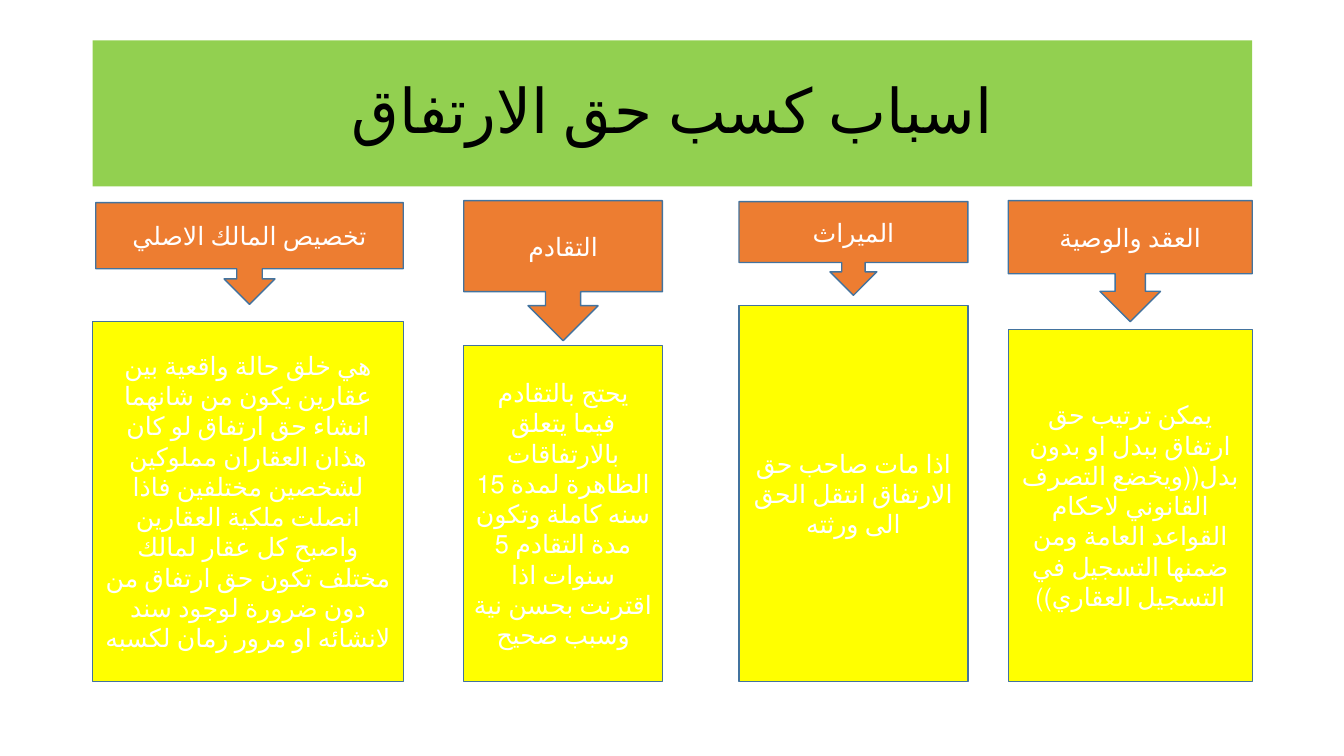
from pptx import Presentation
from pptx.dml.color import RGBColor
from pptx.enum.lang import MSO_LANGUAGE_ID as Language
from pptx.enum.shapes import MSO_SHAPE as Shape
from pptx.enum.text import MSO_ANCHOR as Anchor, PP_ALIGN as Align
from pptx.util import Inches, Pt

GREEN, ORANGE, YELLOW = "92D050", "ED7D31", "FFFF00"
BORDER, WHITE, BLACK = "43739E", "FFFFFF", "000000"
LEFT, RIGHT, BOTTOM = 0.92, 12.42, 6.76

prs = Presentation()
prs.slide_width, prs.slide_height = Inches(13.33), Inches(7.5)
slide = prs.slides.add_slide(prs.slide_layouts[6])


def paint(target, color):
    target.fill.solid()
    target.fill.fore_color.rgb = RGBColor.from_string(color)


def add_block(kind, left, top, width, height, text, fill, color=WHITE, size=18, border=BORDER):
    """Draw a filled shape with centred text; border None leaves the edge bare."""
    block = slide.shapes.add_shape(kind, *map(Inches, (left, top, width, height)))
    block.shadow.inherit = False
    paint(block, fill)
    if border:
        paint(block.line, border)
        block.line.width = Pt(1)
    else:
        block.line.fill.background()
    frame = block.text_frame
    frame.word_wrap = True
    frame.vertical_anchor = Anchor.MIDDLE
    paragraph = frame.paragraphs[0]
    paragraph.alignment = Align.CENTER
    run = paragraph.add_run()
    run.text = text
    font_format = {"size": Pt(size), "name": "Calibri", "language_id": Language.ARABIC_IRAQ}
    for name, value in font_format.items():
        setattr(run.font, name, value)
    paint(run.font, color)
    return block


title = add_block(Shape.RECTANGLE, LEFT, 0.4, RIGHT - LEFT, 1.45,
                  "اسباب كسب حق الارتفاق", GREEN, BLACK, 44, None)
title.text_frame.paragraphs[0].line_spacing = 0.9

# left, width, cause top, cause height, box share of the callout, explanation top, texts
causes = [
    (10, 2.42, 1.99, 1.2, 0.605, 3.27, "العقد والوصية",
     "يمكن ترتيب حق ارتفاق ببدل او بدون بدل((ويخضع التصرف القانوني لاحكام "
     "القواعد العامة ومن ضمنها التسجيل في التسجيل العقاري))"),
    (7.33, 2.27, 2, 0.93, 0.65, 3.03, "الميراث",
     "اذا مات صاحب حق الارتفاق انتقل الحق الى ورثته"),
    (4.6, 1.97, 1.99, 1.39, 0.65, 3.43, "التقادم",
     "يحتج بالتقادم فيما يتعلق بالارتفاقات الظاهرة لمدة 15 سنه كاملة وتكون "
     "مدة التقادم 5 سنوات اذا اقترنت بحسن نية وسبب صحيح"),
    (LEFT, 3.08, 2.01, 1.01, 0.65, 3.19, "تخصيص المالك الاصلي",
     "هي خلق حالة واقعية بين عقارين يكون من شانهما انشاء حق ارتفاق لو كان "
     "هذان العقاران مملوكين لشخصين مختلفين فاذا انصلت ملكية العقارين واصبح "
     "كل عقار لمالك مختلف تكون حق ارتفاق من دون ضرورة لوجود سند لانشائه او "
     "مرور زمان لكسبه"),
]

for left, width, top, height, box_share, body_top, cause, explanation in causes:
    inset = 0.03 if left == LEFT else 0
    callout = add_block(Shape.DOWN_ARROW_CALLOUT, left + inset, top, width - inset, height,
                        cause, ORANGE)
    callout.adjustments[3] = box_share
    body = add_block(Shape.RECTANGLE, left, body_top, width, BOTTOM - body_top,
                     explanation, YELLOW)
    # Digits inside Arabic text need right-to-left order
    if any(letter.isdigit() for letter in explanation):
        body.text_frame.paragraphs[0]._p.get_or_add_pPr().set("rtl", "1")

prs.save("out.pptx")
